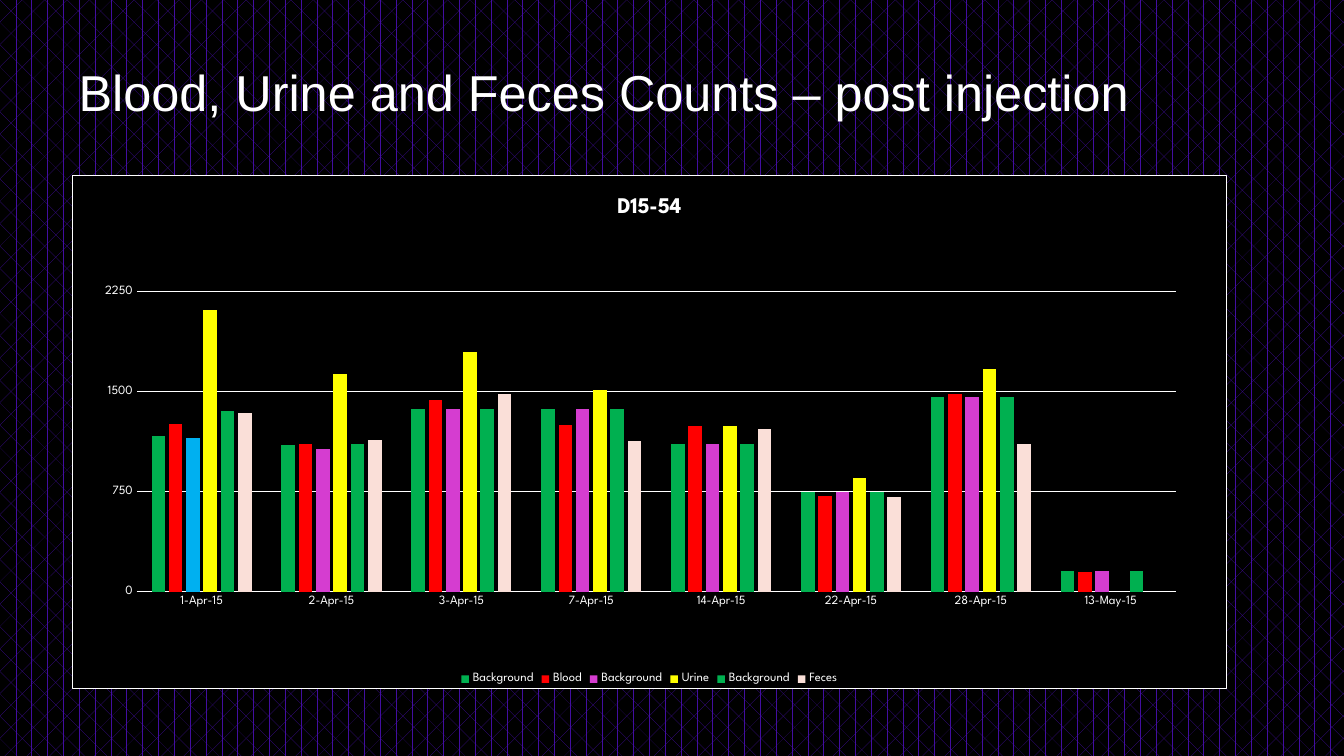
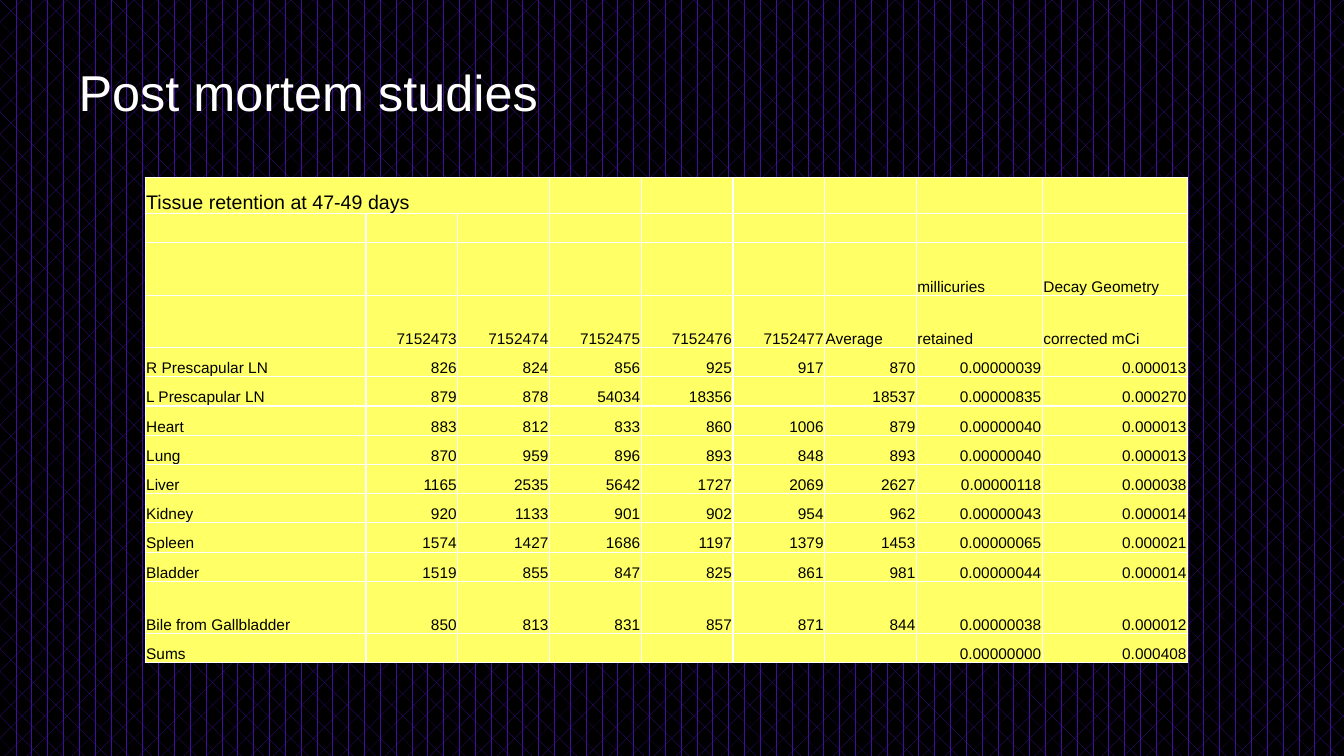
from dataclasses import dataclass

from pptx import Presentation
from pptx.chart.data import CategoryChartData
from pptx.dml.color import RGBColor
from pptx.enum.chart import XL_CHART_TYPE as ChartType, XL_LEGEND_POSITION as LegendPosition
from pptx.enum.chart import XL_TICK_MARK as TickMark
from pptx.enum.dml import MSO_PATTERN as Pattern
from pptx.enum.text import MSO_ANCHOR as Anchor, PP_ALIGN as Align
from pptx.oxml import parse_xml
from pptx.oxml.ns import nsdecls, qn
from pptx.util import Inches, Pt

# Content
COUNTS_TITLE = "Blood, Urine and Feces Counts – post injection"
CHART_TITLE = "D15-54"
DATES = ["1-Apr-15", "2-Apr-15", "3-Apr-15", "7-Apr-15",
         "14-Apr-15", "22-Apr-15", "28-Apr-15", "13-May-15"]
COUNTS = [
    ("Background", "00B050", [1170, 1100, 1370, 1370, 1110, 750, 1460, 160]),
    ("Blood", "FF0000", [1260, 1110, 1440, 1250, 1240, 720, 1480, 150]),
    ("Background", "D53DD0", [1150, 1070, 1370, 1370, 1110, 750, 1460, 160]),
    ("Urine", "FFFF00", [2110, 1630, 1800, 1510, 1240, 850, 1670, None]),
    ("Background", "00B050", [1360, 1110, 1370, 1370, 1110, 750, 1460, 160]),
    ("Feces", "FADFD8", [1340, 1140, 1480, 1130, 1220, 710, 1110, None]),
]
FIRST_URINE_BACKGROUND = (2, 0, "00B0F0")  # series, point, colour

TISSUE_TITLE = "Post mortem studies"
TISSUE_ROWS = [
    ["Tissue retention at 47-49 days"] + [""] * 8,
    [""] * 9,
    [""] * 7 + ["millicuries", "Decay Geometry"],
    ["", "7152473", "7152474", "7152475", "7152476", "7152477", "Average",
     "retained", "corrected mCi"],
    ["R Prescapular LN", "826", "824", "856", "925", "917", "870", "0.00000039", "0.000013"],
    ["L Prescapular LN", "879", "878", "54034", "18356", "", "18537", "0.00000835", "0.000270"],
    ["Heart", "883", "812", "833", "860", "1006", "879", "0.00000040", "0.000013"],
    ["Lung", "870", "959", "896", "893", "848", "893", "0.00000040", "0.000013"],
    ["Liver", "1165", "2535", "5642", "1727", "2069", "2627", "0.00000118", "0.000038"],
    ["Kidney", "920", "1133", "901", "902", "954", "962", "0.00000043", "0.000014"],
    ["Spleen", "1574", "1427", "1686", "1197", "1379", "1453", "0.00000065", "0.000021"],
    ["Bladder", "1519", "855", "847", "825", "861", "981", "0.00000044", "0.000014"],
    ["Bile from Gallbladder", "850", "813", "831", "857", "871", "844", "0.00000038", "0.000012"],
    ["Sums"] + [""] * 6 + ["0.00000000", "0.000408"],
]
COLUMN_WIDTHS = [2.19] + [0.91] * 6 + [1.25, 1.44]
ROW_HEIGHT, TALL_ROW_HEIGHT, HEADING_HEIGHT = 0.29, 0.52, 0.36
TALL_ROWS = {2, 3, 12}


@dataclass(frozen=True)
class Theme:
    black: str = "000000"
    white: str = "FFFFFF"
    purple: str = "420EA0"
    yellow: str = "FFFF66"
    text_font: str = "Arial"
    chart_font: str = "League Spartan"
    title_size: int = 36
    chart_title_size: int = 16
    chart_size: int = 10
    axis_size: int = 9
    heading_size: int = 14
    cell_size: int = 11
    chart_line: float = 0.75
    cell_line: int = 1


THEME = Theme()


# Shared helpers
def rgb(color):
    return RGBColor.from_string(color)


def style_font(font, name, size, color, bold=False):
    font.name, font.size, font.bold = name, Pt(size), bold
    font.color.rgb = rgb(color)


def style_line(line, color, width):
    line.color.rgb = rgb(color)
    line.width = Pt(width)


def line_xml(tag, color, width):
    return (f'<a:{tag} {nsdecls("a")} w="{Pt(width)}"><a:solidFill>'
            f'<a:srgbClr val="{color}"/></a:solidFill></a:{tag}>')


def set_backdrop(prs):
    fill = prs.slide_master.background.fill
    fill.patterned()
    fill.pattern = Pattern.DIVOT
    fill.fore_color.rgb = rgb(THEME.purple)
    fill.back_color.rgb = rgb(THEME.black)


def add_titled_slide(prs, text, width):
    slide = prs.slides.add_slide(prs.slide_layouts[5])
    title = slide.shapes.title
    title.left, title.top = Inches(0.71), Inches(0.5)
    title.width, title.height = Inches(width), Inches(0.92)
    frame = title.text_frame
    frame.text = text
    frame.vertical_anchor = Anchor.TOP
    frame.margin_left, frame.margin_top = Inches(0.07), Inches(0.11)
    heading = frame.paragraphs[0]
    heading.alignment = Align.LEFT
    style_font(heading.runs[0].font, THEME.text_font, THEME.title_size, THEME.white)
    return slide


# Counts chart
def frame_chart(chart):
    """Fill and outline the chart area and fix the inner plot area."""
    area = chart._chartSpace.find(qn("c:chart"))
    area.addnext(parse_xml(
        f'<c:spPr {nsdecls("c", "a")}><a:solidFill><a:srgbClr val="{THEME.black}"/>'
        f'</a:solidFill>{line_xml("ln", THEME.white, THEME.chart_line)}</c:spPr>'))
    plot_area = area.find(qn("c:plotArea"))
    for layout in plot_area.findall(qn("c:layout")):
        plot_area.remove(layout)
    place = {"layoutTarget": "inner", "xMode": "edge", "yMode": "edge",
             "x": 0.056, "y": 0.161, "w": 0.9, "h": 0.65}
    parts = "".join(f'<c:{tag} val="{value}"/>' for tag, value in place.items())
    plot_area.insert(0, parse_xml(
        f'<c:layout {nsdecls("c")}><c:manualLayout>{parts}</c:manualLayout></c:layout>'))


def add_counts_chart(slide):
    data = CategoryChartData()
    data.categories = DATES
    for name, _, values in COUNTS:
        data.add_series(name, values)
    chart = slide.shapes.add_chart(
        ChartType.COLUMN_CLUSTERED, Inches(0.71), Inches(1.74),
        Inches(11.46), Inches(5.1), data).chart
    style_font(chart.font, THEME.chart_font, THEME.chart_size, THEME.white)
    frame_chart(chart)

    chart.has_title = True
    chart.chart_title.text_frame.text = CHART_TITLE
    style_font(chart.chart_title.text_frame.paragraphs[0].runs[0].font,
               THEME.chart_font, THEME.chart_title_size, THEME.white, bold=True)

    # Columns
    plot = chart.plots[0]
    plot.gap_width, plot.overlap, plot.vary_by_categories = 219, -27, False
    for series, (_, color, _) in zip(plot.series, COUNTS):
        series.format.fill.solid()
        series.format.fill.fore_color.rgb = rgb(color)
    series_index, point_index, color = FIRST_URINE_BACKGROUND
    point_fill = plot.series[series_index].points[point_index].format.fill
    point_fill.solid()
    point_fill.fore_color.rgb = rgb(color)

    # Axes and legend
    dates, counts = chart.category_axis, chart.value_axis
    for axis in (dates, counts):
        axis.major_tick_mark = axis.minor_tick_mark = TickMark.NONE
        style_font(axis.tick_labels.font, THEME.chart_font, THEME.axis_size, THEME.white)
    style_line(dates.format.line, THEME.white, THEME.chart_line)
    counts.minimum_scale, counts.maximum_scale, counts.major_unit = 0, 2500, 750
    counts.format.line.fill.background()
    style_line(counts.major_gridlines.format.line, THEME.white, THEME.chart_line)
    chart.has_legend = True
    chart.legend.position = LegendPosition.BOTTOM
    chart.legend.include_in_layout = False
    style_font(chart.legend.font, THEME.chart_font, THEME.axis_size, THEME.white)


# Tissue table
def is_number(text):
    return text.replace(".", "").isdigit()


def fill_cell(cell, text, size):
    cell.margin_left = cell.margin_right = cell.margin_top = Inches(0.01)
    cell.margin_bottom = 0
    cell.vertical_anchor = Anchor.BOTTOM
    cell.fill.solid()
    cell.fill.fore_color.rgb = rgb(THEME.yellow)
    properties = cell._tc.get_or_add_tcPr()
    for position, side in enumerate(("lnL", "lnR", "lnT", "lnB")):
        properties.insert(position, parse_xml(line_xml(side, THEME.white, THEME.cell_line)))
    entry = cell.text_frame.paragraphs[0]
    if text:
        entry.text = text
        entry.alignment = Align.RIGHT if is_number(text) else Align.LEFT
        style_font(entry.runs[0].font, THEME.text_font, size, THEME.black)
    else:  # keeps an empty cell from stretching its row
        entry._p.append(parse_xml(f'<a:endParaRPr {nsdecls("a")} sz="{size * 100}"/>'))


def add_tissue_table(slide):
    heights = [HEADING_HEIGHT] + [
        TALL_ROW_HEIGHT if row in TALL_ROWS else ROW_HEIGHT
        for row in range(1, len(TISSUE_ROWS))]
    table = slide.shapes.add_table(
        len(heights), len(COLUMN_WIDTHS), Inches(1.44), Inches(1.76),
        Inches(sum(COLUMN_WIDTHS)), Inches(sum(heights))).table
    table.first_row = table.horz_banding = False
    for column, width in zip(table.columns, COLUMN_WIDTHS):
        column.width = Inches(width)
    for row_index, (height, texts) in enumerate(zip(heights, TISSUE_ROWS)):
        table.rows[row_index].height = Inches(height)
        size = THEME.cell_size if row_index else THEME.heading_size
        for column_index, text in enumerate(texts):
            fill_cell(table.cell(row_index, column_index), text, size)
    table.cell(0, 0).merge(table.cell(0, 2))


def main():
    prs = Presentation()
    prs.slide_width, prs.slide_height = Inches(13.33), Inches(7.5)
    set_backdrop(prs)
    add_counts_chart(add_titled_slide(prs, COUNTS_TITLE, 11.46))
    add_tissue_table(add_titled_slide(prs, TISSUE_TITLE, 10.29))
    prs.save("out.pptx")


if __name__ == "__main__":
    main()
